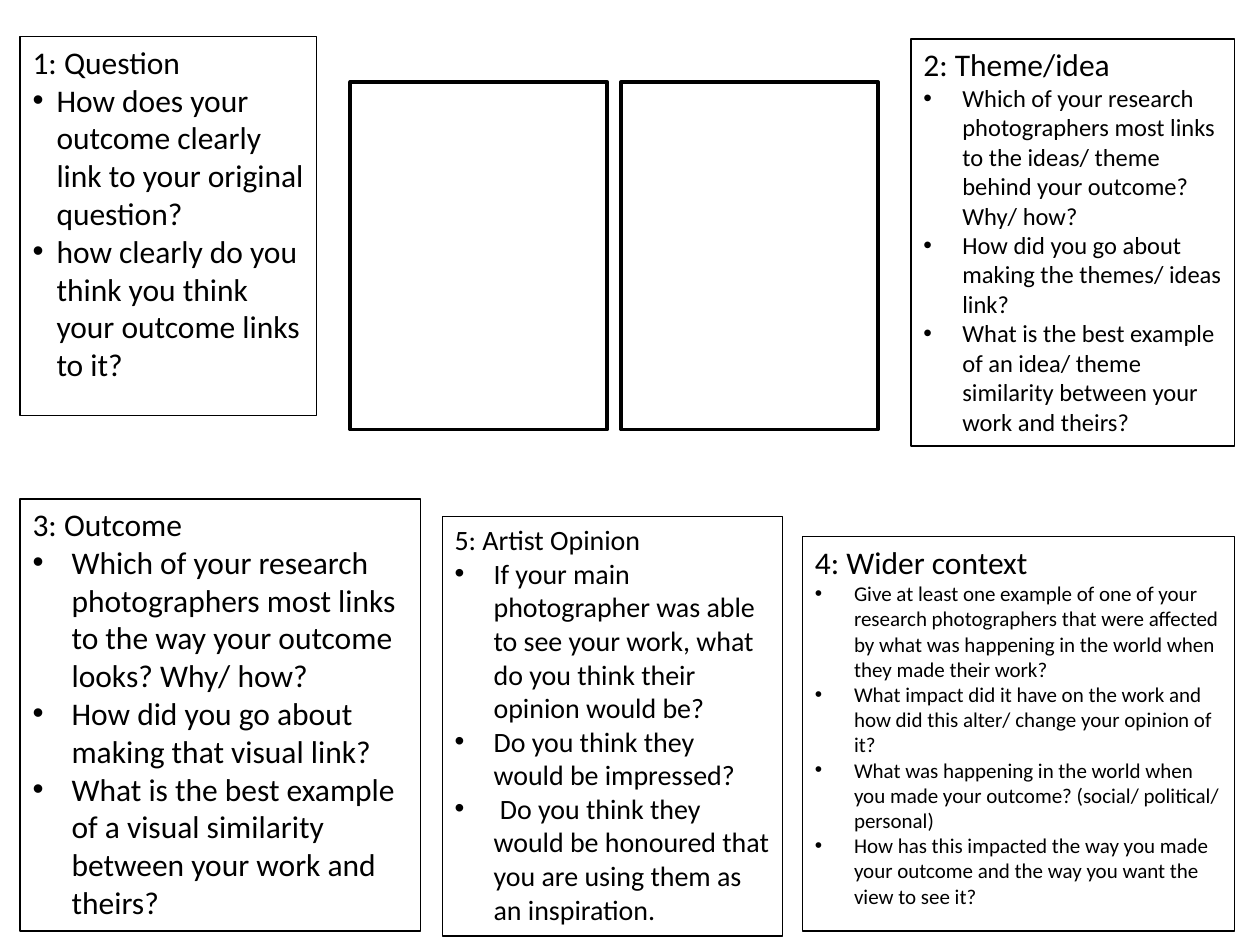
from lxml import etree
from pptx import Presentation
from pptx.dml.color import RGBColor
from pptx.enum.shapes import MSO_SHAPE
from pptx.enum.text import MSO_ANCHOR, MSO_AUTO_SIZE
from pptx.oxml.ns import qn
from pptx.util import Inches, Pt

RECTANGLE = MSO_SHAPE.RECTANGLE
FRAME_FORMAT = {
    "word_wrap": True,
    "auto_size": MSO_AUTO_SIZE.NONE,
    "vertical_anchor": MSO_ANCHOR.TOP,
}
THEME = {
    "font": "Calibri",
    "ink": RGBColor(0, 0, 0),
    "paper": RGBColor(255, 255, 255),
    "large": Pt(18),
    "medium": Pt(16),
    "small": Pt(14),
    "tiny": Pt(12),
    "box_line": Pt(0.75),
    "photo_line": Pt(2),
}

QUESTION_BOXES = [
    ("1: Question", (0.16, 0.29, 2.35, 3.01), "large", "large", 0.19, [
        "How does your outcome clearly link to your original question?",
        "how clearly do you think you think your outcome links to it?",
    ]),
    ("2: Theme/idea", (7.23, 0.31, 2.57, 3.23), "large", "small", 0.31, [
        "Which of your research photographers most links to the ideas/ theme behind your outcome? Why/ how?",
        "How did you go about making the themes/ ideas link?",
        "What is the best example of an idea/ theme similarity between your work and theirs?",
    ]),
    ("3: Outcome", (0.16, 3.96, 3.18, 3.43), "large", "large", 0.31, [
        "Which of your research photographers most links to the way your outcome looks? Why/ how?",
        "How did you go about making that visual link?",
        "What is the best example of a visual similarity between your work and theirs?",
    ]),
    ("4: Wider context", (6.37, 4.26, 3.43, 3.13), "large", "tiny", 0.31, [
        "Give at least one example of one of your research photographers that were affected by what was happening in the world when they made their work?",
        "What impact did it have on the work and how did this alter/ change your opinion of it?",
        "What was happening in the world when you made your outcome? (social/ political/ personal)",
        "How has this impacted the way you made your outcome and the way you want the view to see it?",
    ]),
    ("5: Artist Opinion", (3.51, 4.1, 2.7, 3.33), "medium", "medium", 0.31, [
        "If your main photographer was able to see your work, what do you think their opinion would be?",
        "Do you think they would be impressed?",
        " Do you think they would be honoured that you are using them as an inspiration.",
    ]),
]


def write_run(paragraph, text, size):
    run = paragraph.add_run()
    run.text = text
    run.font.color.rgb = THEME["ink"]
    for name, value in {"name": THEME["font"], "size": THEME[size]}.items():
        setattr(run.font, name, value)


def add_bullet(paragraph, indent):
    properties = paragraph._p.get_or_add_pPr()
    properties.set("marL", str(Inches(indent)))
    properties.set("indent", str(-Inches(indent)))
    etree.SubElement(properties, qn("a:buFont")).set("typeface", "Arial")
    etree.SubElement(properties, qn("a:buChar")).set("char", "•")


presentation = Presentation()
presentation.slide_width = Inches(10)
presentation.slide_height = Inches(7.5)
slide = presentation.slides.add_slide(presentation.slide_layouts[6])

for heading, position, heading_size, prompt_size, indent, prompts in QUESTION_BOXES:
    box = slide.shapes.add_textbox(*map(Inches, position))
    box.line.color.rgb = THEME["ink"]
    box.line.width = THEME["box_line"]
    frame = box.text_frame
    for name, value in FRAME_FORMAT.items():
        setattr(frame, name, value)
    write_run(frame.paragraphs[0], heading, heading_size)
    for prompt in prompts:
        paragraph = frame.add_paragraph()
        add_bullet(paragraph, indent)
        write_run(paragraph, prompt, prompt_size)

for left in (2.78, 4.93):
    photo_frame = slide.shapes.add_shape(RECTANGLE, *map(Inches, (left, 0.65, 2.04, 2.76)))
    photo_frame.shadow.inherit = False
    photo_frame.fill.solid()
    photo_frame.fill.fore_color.rgb = THEME["paper"]
    photo_frame.line.color.rgb = THEME["ink"]
    photo_frame.line.width = THEME["photo_line"]

presentation.save("out.pptx")
